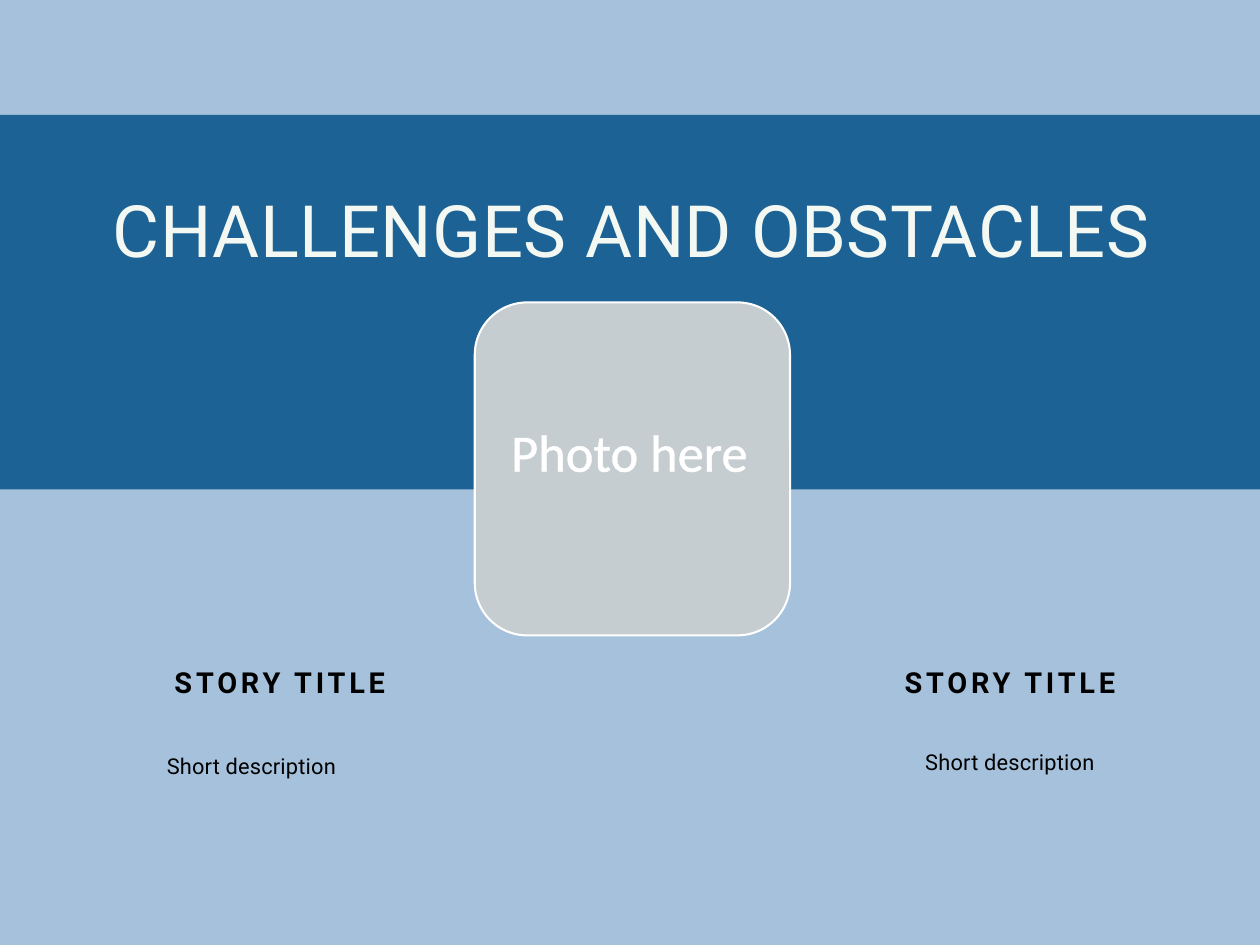
from dataclasses import dataclass
from typing import Optional

from lxml.etree import SubElement
from pptx import Presentation
from pptx.dml.color import RGBColor
from pptx.enum.shapes import MSO_SHAPE
from pptx.enum.text import MSO_ANCHOR, MSO_AUTO_SIZE, PP_ALIGN
from pptx.oxml.ns import qn
from pptx.util import Pt


@dataclass(frozen=True)
class TextStyle:
    size: float
    color: str
    font: str = "Roboto"
    bold: bool = False
    leading: Optional[float] = None
    tracking: float = 0


@dataclass(frozen=True)
class Theme:
    background: str = "A5C1DB"
    band: str = "1D6294"
    photo: str = "C6CDD1"
    white: str = "FFFFFF"
    title: TextStyle = TextStyle(44, "F4F8F3", leading=47.1, tracking=0.3)
    heading: TextStyle = TextStyle(17.6, "000000", bold=True, leading=24.6, tracking=2.3)
    body: TextStyle = TextStyle(13.3, "000000", leading=20, tracking=0.1)
    photo_label: TextStyle = TextStyle(32, "FFFFFF", font="Calibri")


@dataclass(frozen=True)
class Box:
    left: float
    top: float
    width: float
    height: float

    def lengths(self) -> tuple:
        return Pt(self.left), Pt(self.top), Pt(self.width), Pt(self.height)


@dataclass(frozen=True)
class Story:
    heading: str
    heading_box: Box
    description: str
    description_box: Box


THEME = Theme()
SLIDE_WIDTH, SLIDE_HEIGHT = 768, 576
STORIES = (
    Story("STORY TITLE", Box(58.3, 401.8, 224.6, 23.8),
          "Short description", Box(58.3, 455, 190, 18.7)),
    Story("STORY TITLE", Box(520.6, 401.8, 190, 23.8),
          "Short description", Box(520.6, 452.2, 190, 18.7)),
)


def rgb(color: str) -> RGBColor:
    return RGBColor.from_string(color)


def write(shape, text: str, style: TextStyle, wrap: bool = True, inset: float = 0):
    """Fill a shape with one centred, styled line and return its run."""
    frame = shape.text_frame
    frame.text = text
    frame.word_wrap = wrap
    frame.auto_size = MSO_AUTO_SIZE.SHAPE_TO_FIT_TEXT
    frame.vertical_anchor = MSO_ANCHOR.TOP
    frame.margin_left = frame.margin_right = Pt(inset)
    frame.margin_top = frame.margin_bottom = Pt(inset / 2)
    line = frame.paragraphs[0]
    line.alignment = PP_ALIGN.CENTER
    line.space_before = Pt(0)
    if style.leading:
        line.line_spacing = Pt(style.leading)
    run = line.runs[0]
    run.font.name = style.font
    run.font.size = Pt(style.size)
    run.font.bold = style.bold
    run.font.color.rgb = rgb(style.color)
    if style.tracking:
        run.font._element.set("spc", str(round(style.tracking * 100)))
    return run


def add_panel(slide, kind: MSO_SHAPE, box: Box, fill: str, outline: Optional[str] = None):
    panel = slide.shapes.add_shape(kind, *box.lengths())
    panel.shadow.inherit = False
    panel.fill.solid()
    panel.fill.fore_color.rgb = rgb(fill)
    if outline:
        panel.line.color.rgb = rgb(outline)
        panel.line.width = Pt(1.25)
    else:
        panel.line.fill.background()
    return panel


def add_story(slide, story: Story) -> None:
    group = slide.shapes.add_group_shape()
    for text, box, style in (
        (story.heading, story.heading_box, THEME.heading),
        (story.description, story.description_box, THEME.body),
    ):
        write(group.shapes.add_textbox(*box.lengths()), text, style)


def outline_text(run, color: str, width: float) -> None:
    outline = SubElement(run.font._element, qn("a:ln"), w=str(Pt(width)))
    fill = SubElement(outline, qn("a:solidFill"))
    SubElement(fill, qn("a:srgbClr"), val=color)
    run.font._element.insert(0, outline)


def main() -> None:
    deck = Presentation()
    deck.slide_width, deck.slide_height = Pt(SLIDE_WIDTH), Pt(SLIDE_HEIGHT)
    slide = deck.slides.add_slide(deck.slide_layouts[5])
    slide.background.fill.solid()
    slide.background.fill.fore_color.rgb = rgb(THEME.background)

    # Title on its band
    title = slide.shapes.title
    title.left, title.top, title.width, title.height = Box(36, 118.8, 698.4, 47.5).lengths()
    write(title, "CHALLENGES AND OBSTACLES", THEME.title)
    band = add_panel(slide, MSO_SHAPE.RECTANGLE, Box(0, 70, SLIDE_WIDTH, 228.4), THEME.band)
    title.element.addprevious(band.element)

    # Stories at left and right
    for story in STORIES:
        add_story(slide, story)

    # Photo frame and its label
    add_panel(slide, MSO_SHAPE.ROUNDED_RECTANGLE, Box(289.4, 184.3, 192.2, 203),
              THEME.photo, THEME.white)
    label = slide.shapes.add_textbox(*Box(303.8, 252, 159.8, 46.1).lengths())
    label_run = write(label, "Photo here", THEME.photo_label, wrap=False, inset=7.2)
    outline_text(label_run, THEME.white, 1.45)

    deck.save("out.pptx")


if __name__ == "__main__":
    main()
